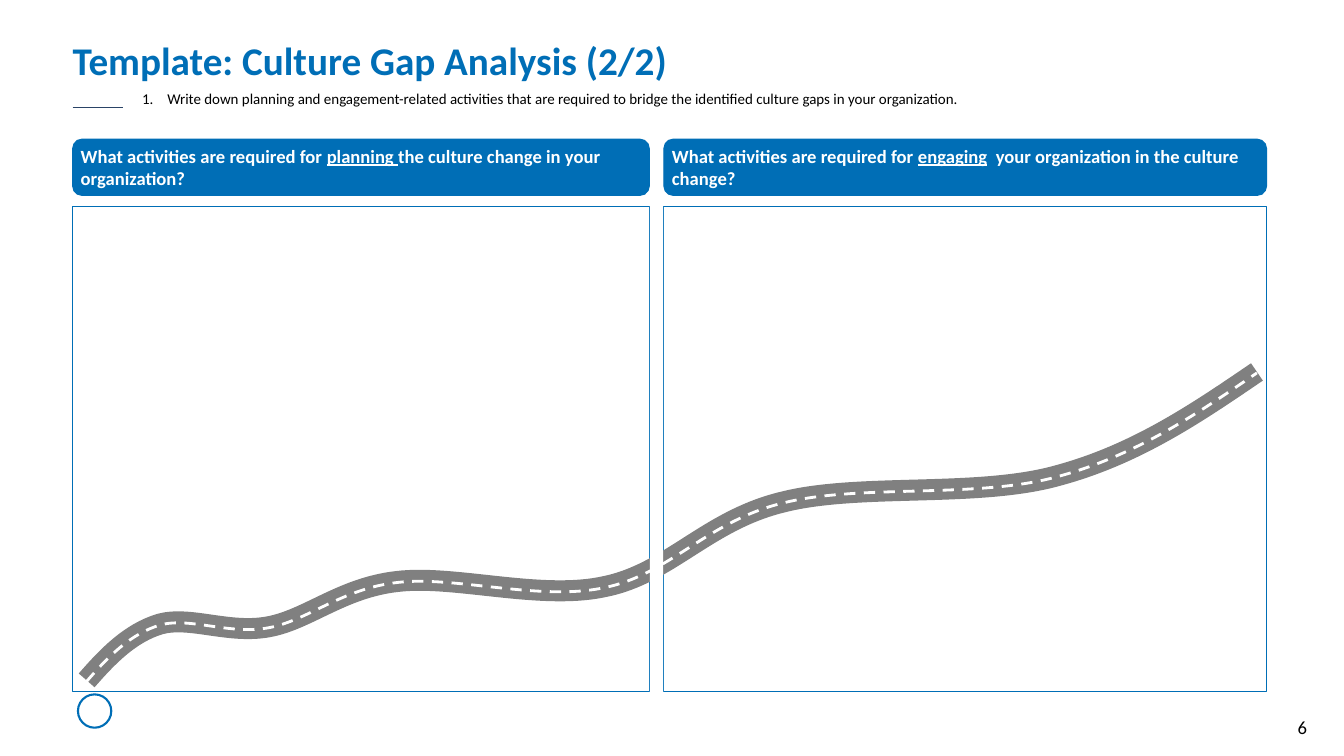
from dataclasses import dataclass
from lxml import etree
from pptx import Presentation
from pptx import util as u
from pptx.dml.color import RGBColor
from pptx.enum import dml, shapes, text
from pptx.oxml import ns

Pt = u.Pt
BLUE, WHITE, BLACK, GREY, NAVY = "006EB6", "FFFFFF", "000000", "808080", "2A4366"
HEADER_TOP, HEADER_HEIGHT = 99.4, 40.2
PANEL_TOP, PANEL_HEIGHT = 147.5, 346.8


@dataclass
class Column:
    left: float
    width: float
    topic: str
    ending: str


@dataclass
class RoadStroke:
    color: str
    width: float
    drop: float
    dashed: bool


COLUMNS = [
    Column(51.9, 411.9, "planning ", "the culture change in your organization?"),
    Column(474.2, 430.5, "engaging", "  your organization in the culture change?"),
]
STROKES = [
    RoadStroke(GREY, 15, 0, False),
    RoadStroke(WHITE, 2, 0.7, True),
]
# Road: a start point, then two control points and an end point per bend
ROAD_START = (61.9, 486)
ROAD_BENDS = [
    ((77, 468.7), (92.9, 452.2), (114.5, 445.7)),
    ((136.1, 440), (163.4, 452.9), (191.5, 447.8)),
    ((219.6, 442.8), (244.1, 419.8), (283.7, 415.4)),
    ((324, 410.4), (386.6, 429.1), (432, 419)),
    ((478.1, 409.7), (505.4, 371.5), (559.4, 358.6)),
    ((613.4, 344.9), (698.4, 355.7), (755.3, 339.8)),
    ((811.4, 324.7), (854.6, 295.2), (897.8, 265.7)),
]


def rgb(color: str) -> RGBColor:
    return RGBColor.from_string(color)


def add_span(para, words: str, *, size: float, color: str,
             bold: bool = False, underline: bool = False) -> None:
    span = para.add_run()
    span.text = words
    span.font.name, span.font.size = "Calibri", Pt(size)
    span.font.bold, span.font.underline = bold, underline
    span.font.color.rgb = rgb(color)


def set_frame(box, *, side: float = 0, end: float = 0,
              anchor=text.MSO_ANCHOR.TOP, align=text.PP_ALIGN.LEFT):
    """Format the text frame and return its first paragraph."""
    frame = box.text_frame
    frame.auto_size = text.MSO_AUTO_SIZE.NONE
    frame.word_wrap, frame.vertical_anchor = True, anchor
    frame.margin_left = frame.margin_right = Pt(side)
    frame.margin_top = frame.margin_bottom = Pt(end)
    para = frame.paragraphs[0]
    para.alignment, para.space_before = align, Pt(0)
    return para


def place(box, left: float, top: float, width: float, height: float) -> None:
    box.left, box.top = Pt(left), Pt(top)
    box.width, box.height = Pt(width), Pt(height)


def add_box(page, kind, left: float, top: float, width: float, height: float, *,
            fill: str | None = None, line: str | None = None, weight: float = 0.75):
    box = page.shapes.add_shape(kind, Pt(left), Pt(top), Pt(width), Pt(height))
    box.shadow.inherit = False
    if fill:
        box.fill.solid()
        box.fill.fore_color.rgb = rgb(fill)
    else:
        box.fill.background()
    if line:
        box.line.color.rgb, box.line.width = rgb(line), Pt(weight)
    else:
        box.line.fill.background()
    return box


def curve_segments(shape) -> None:
    """Join each three straight segments into one cubic curve."""
    segments = list(shape._element.iter(ns.qn("a:lnTo")))
    for first, second, end in zip(segments[::3], segments[1::3], segments[2::3]):
        curve = etree.Element(ns.qn("a:cubicBezTo"))
        first.addprevious(curve)
        for segment in (first, second, end):
            curve.append(segment[0])
            segment.getparent().remove(segment)


def add_road(page, stroke: RoadStroke) -> None:
    def shifted(point: tuple[float, float]) -> tuple[int, int]:
        return Pt(point[0]), Pt(point[1] + stroke.drop)

    builder = page.shapes.build_freeform(*shifted(ROAD_START), scale=1.0)
    builder.add_line_segments([shifted(point) for bend in ROAD_BENDS for point in bend],
                              close=False)
    road = builder.convert_to_shape()
    curve_segments(road)
    road.shadow.inherit = False
    road.fill.background()
    road.line.color.rgb, road.line.width = rgb(stroke.color), Pt(stroke.width)
    if stroke.dashed:
        road.line.dash_style = dml.MSO_LINE.DASH


def add_column(page, column: Column) -> None:
    add_box(page, shapes.MSO_SHAPE.RECTANGLE, column.left, PANEL_TOP,
            column.width, PANEL_HEIGHT, line=BLUE)
    header = add_box(page, shapes.MSO_SHAPE.ROUNDED_RECTANGLE, column.left, HEADER_TOP,
                     column.width, HEADER_HEIGHT, fill=BLUE, line=BLUE)
    para = set_frame(header, side=3.8, end=5, anchor=text.MSO_ANCHOR.MIDDLE)
    look = dict(size=13.3, color=WHITE, bold=True)
    add_span(para, "What activities are required for ", **look)
    add_span(para, column.topic, underline=True, **look)
    add_span(para, column.ending, **look)


def main() -> None:
    deck = Presentation()
    deck.slide_width, deck.slide_height = Pt(960), Pt(540)
    page = deck.slides.add_slide(deck.slide_layouts[1])

    # Title
    title = page.shapes.title
    place(title, 51.8, 30.6, 853, 101.5)
    para = set_frame(title)
    para.line_spacing = 0.87
    add_span(para, "Template: Culture Gap Analysis (2/2)", size=28, color=BLUE, bold=True)

    # Numbered instruction with its short rule
    body = page.placeholders[1]
    place(body, 98.6, 61.2, 703.5, 34.5)
    para = set_frame(body, side=2.9, end=2.9)
    props = para._p.get_or_add_pPr()
    props.set("marL", str(Pt(18)))
    props.set("indent", str(-Pt(18)))
    etree.SubElement(props, ns.qn("a:buFont"), typeface="+mj-lt")
    etree.SubElement(props, ns.qn("a:buAutoNum"), type="arabicPeriod")
    add_span(para, "Write down planning and engagement-related activities that are required "
             "to bridge the identified culture gaps in your organization.",
             size=10.7, color=BLACK)
    rule = page.shapes.add_connector(shapes.MSO_CONNECTOR.STRAIGHT,
                                     Pt(51.8), Pt(77), Pt(88.2), Pt(77))
    rule.line.color.rgb, rule.line.width = rgb(NAVY), Pt(1)
    etree.SubElement(rule._element.spPr, ns.qn("a:effectLst"))

    # Columns, the road across them and the gap between them
    for column in COLUMNS:
        add_column(page, column)
    for stroke in STROKES:
        add_road(page, stroke)
    gap_left = COLUMNS[0].left + COLUMNS[0].width + 0.5
    add_box(page, shapes.MSO_SHAPE.RECTANGLE, gap_left, PANEL_TOP,
            COLUMNS[1].left - 0.5 - gap_left, PANEL_HEIGHT, fill=WHITE)

    # Footer: plain ring and page number
    add_box(page, shapes.MSO_SHAPE.OVAL, 55.7, 496, 23.8, 23.8, line=BLUE, weight=1.5)
    number = page.shapes.add_textbox(Pt(909.4), Pt(511.2), Pt(24.2), Pt(16))
    para = set_frame(number, anchor=text.MSO_ANCHOR.MIDDLE, align=text.PP_ALIGN.RIGHT)
    add_span(para, "6", size=13.3, color=BLACK)

    deck.save("out.pptx")


if __name__ == "__main__":
    main()
